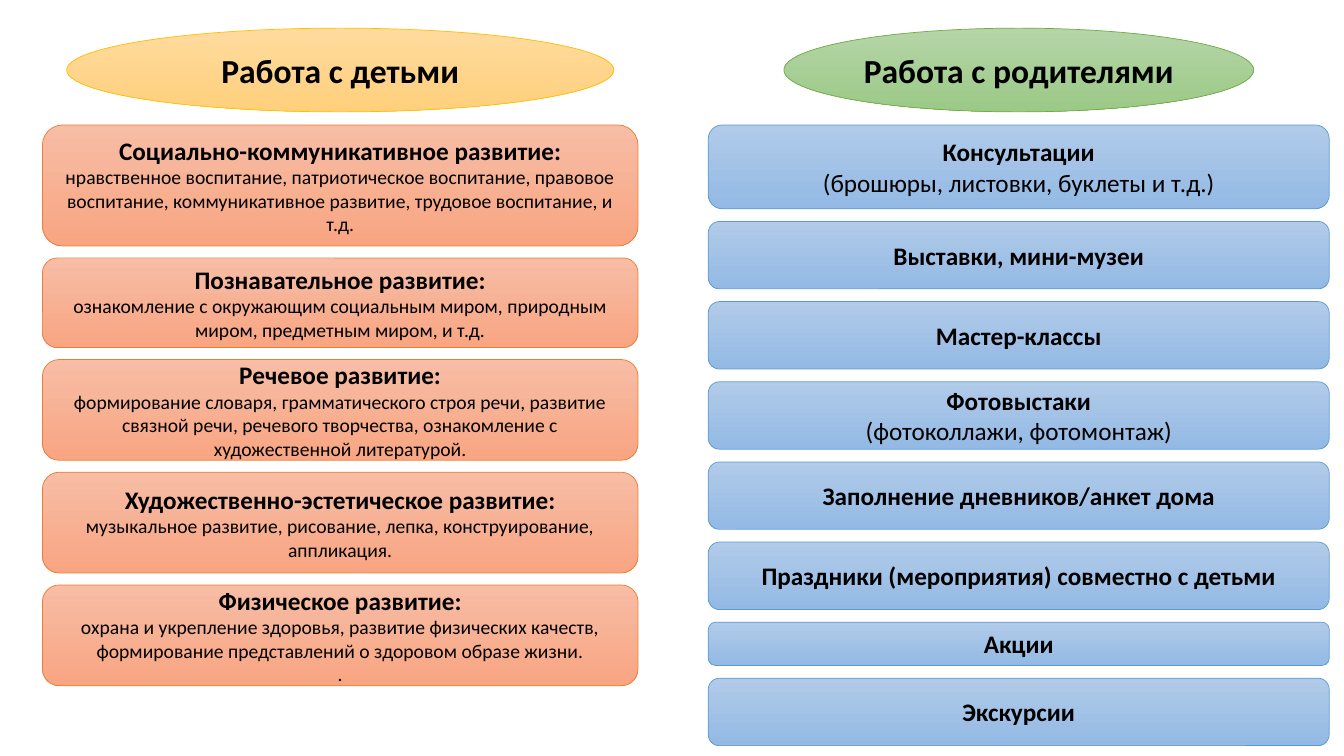
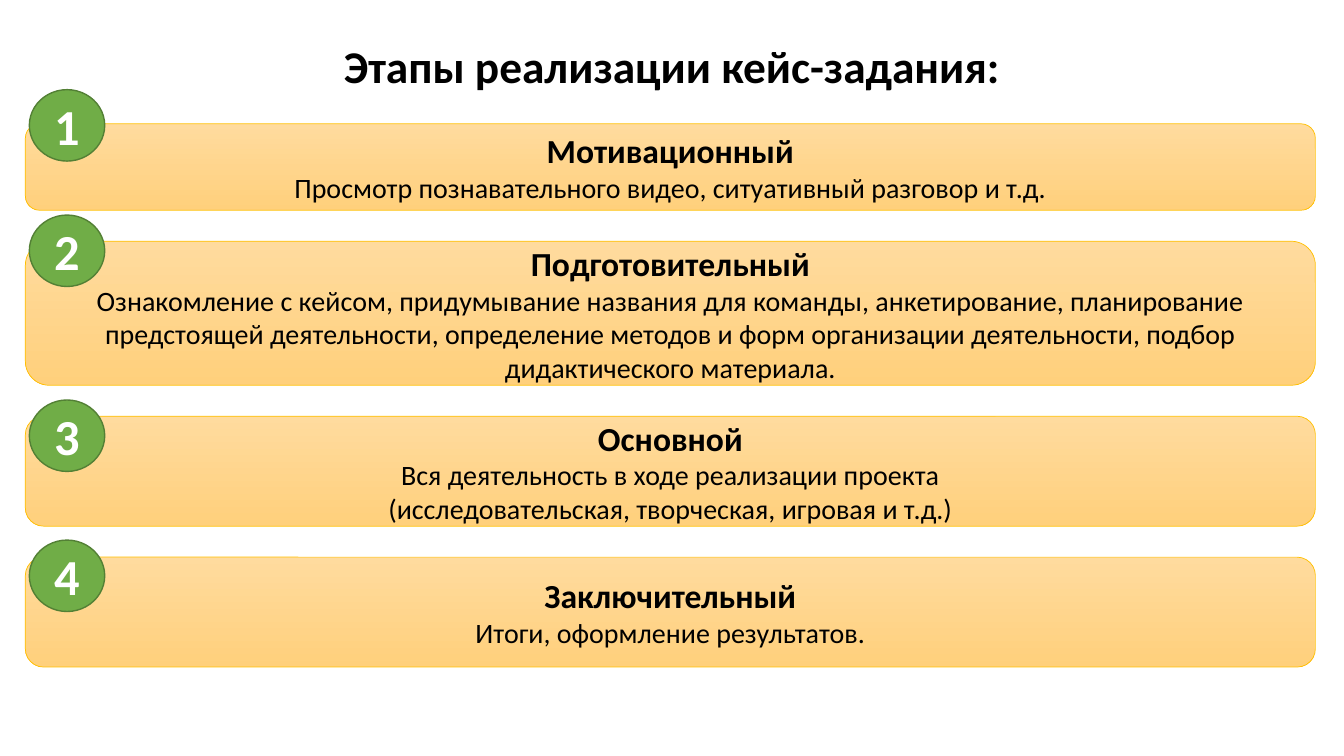
from pptx import Presentation
from pptx.dml.color import RGBColor
from pptx.enum.shapes import MSO_SHAPE as Shape
from pptx.enum.text import MSO_ANCHOR as Anchor, MSO_AUTO_SIZE as AutoSize, PP_ALIGN as Align
from pptx.util import Cm, Pt

FONT = "Calibri"
BLACK, WHITE = "000000", "FFFFFF"

# Each style: fill colours from top to bottom, line colour, line width in points
GOLD = (("FFDB9E", "FFD07C"), "FFC000", 0.5)
LIGHT_GREEN = (("B5D5A7", "9CC987"), "70AD47", 0.5)
ORANGE = (("F7BDA5", "F8A582"), "ED7D31", 0.5)
BLUE = (("B1CBE9", "93B9E4"), "5B9BD5", 0.5)
BADGE_GREEN = (("70AD47",), "538035", 1)

# Each card: height in cm, heading, detail lines
CHILDREN_CARDS = [
    (3.05, "Социально-коммуникативное развитие:",
     ["нравственное воспитание, патриотическое воспитание, правовое воспитание, "
      "коммуникативное развитие, трудовое воспитание, и т.д."]),
    (2.26, "Познавательное развитие:",
     ["ознакомление с окружающим социальным миром, природным миром, "
      "предметным миром, и т.д."]),
    (2.54, "Речевое развитие:",
     ["формирование словаря, грамматического строя речи, развитие связной речи, "
      "речевого творчества, ознакомление с художественной литературой."]),
    (2.54, "Художественно-эстетическое развитие:",
     ["музыкальное развитие, рисование, лепка, конструирование, аппликация."]),
    (2.54, "Физическое развитие:",
     ["охрана и укрепление здоровья, развитие физических качеств, "
      "формирование представлений о здоровом образе жизни.", "."]),
]
PARENT_CARDS = [
    (2.11, "Консультации", ["(брошюры, листовки, буклеты и т.д.)"]),
    (1.7, "Выставки, мини-музеи", []),
    (1.7, "Мастер-классы", []),
    (1.7, "Фотовыстаки", ["(фотоколлажи, фотомонтаж)"]),
    (1.7, "Заполнение дневников/анкет дома", []),
    (1.7, "Праздники (мероприятия) совместно с детьми", []),
    (1.09, "Акции", []),
    (1.7, "Экскурсии", []),
]
STAGE_CARDS = [
    (2.18, "Мотивационный",
     ["Просмотр познавательного видео, ситуативный разговор и т.д."]),
    (3.63, "Подготовительный",
     ["Ознакомление с кейсом, придумывание названия для команды, анкетирование, "
      "планирование предстоящей деятельности, определение методов и форм "
      "организации деятельности, подбор дидактического материала."]),
    (2.77, "Основной",
     ["Вся деятельность в ходе реализации проекта",
      "(исследовательская, творческая, игровая и т.д.)"]),
    (2.77, "Заключительный", ["Итоги, оформление результатов."]),
]
# How far each number badge rises above its card, in cm
BADGE_RISES = [0.86, 0.66, 0.41, 0.43]


def color(hex_value):
    return RGBColor.from_string(hex_value)


def write_lines(text_frame, lines, font_color=BLACK):
    """Write centred paragraphs; each line is (text, size, bold)."""
    text_frame.word_wrap = True
    text_frame.auto_size = AutoSize.NONE
    text_frame.vertical_anchor = Anchor.MIDDLE
    text_frame.text = "\n".join(text for text, _, _ in lines)
    for paragraph, (_, size, bold) in zip(text_frame.paragraphs, lines):
        paragraph.alignment = Align.CENTER
        font = paragraph.runs[0].font
        font.name, font.size, font.bold = FONT, Pt(size), bold
        font.color.rgb = color(font_color)


def add_panel(slide, kind, box, style, lines, font_color=BLACK):
    """Draw one filled shape with text; box is left, top, width, height in cm."""
    shape = slide.shapes.add_shape(kind, *(Cm(length) for length in box))
    shape.shadow.inherit = False
    fills, line_color, line_width = style
    if len(fills) == 1:
        shape.fill.solid()
        shape.fill.fore_color.rgb = color(fills[0])
    else:
        shape.fill.gradient()
        shape.fill.gradient_angle = 270
        for stop, fill in zip(shape.fill.gradient_stops, fills):
            stop.color.rgb = color(fill)
    shape.line.color.rgb = color(line_color)
    shape.line.width = Pt(line_width)
    write_lines(shape.text_frame, lines, font_color)


def add_card_stack(slide, left, top, width, gap, style, cards, sizes):
    """Stack cards downwards with equal gaps and return their tops."""
    heading_size, detail_size = sizes
    tops = []
    for height, heading, details in cards:
        lines = [(heading, heading_size, True)]
        lines += [(detail, detail_size, False) for detail in details]
        add_panel(slide, Shape.ROUNDED_RECTANGLE, (left, top, width, height), style, lines)
        tops.append(top)
        top += height + gap
    return tops


def add_column(slide, left, width, header, header_width, header_style,
               gap, style, cards, sizes):
    """Place an oval header centred over a stack of cards."""
    header_left = left + (width - header_width) / 2
    add_panel(slide, Shape.OVAL, (header_left, 0.71, header_width, 2.11),
              header_style, [(header, 24, True)])
    add_card_stack(slide, left, 3.15, width, gap, style, cards, sizes)


def build_work_slide(presentation):
    slide = presentation.slides.add_slide(presentation.slide_layouts[6])
    add_column(slide, 1.07, 15.01, "Работа с детьми", 13.79, GOLD,
               0.3, ORANGE, CHILDREN_CARDS, (18, 14))
    add_column(slide, 17.85, 15.65, "Работа с родителями", 11.84, LIGHT_GREEN,
               0.32, BLUE, PARENT_CARDS, (18, 18))


def build_stages_slide(presentation):
    slide = presentation.slides.add_slide(presentation.slide_layouts[5])

    # Title
    title = slide.shapes.title
    title.left, title.top, title.width, title.height = Cm(2.33), Cm(1.02), Cm(29.21), Cm(1.45)
    write_lines(title.text_frame, [("Этапы реализации кейс-задания:", 32.4, True)])
    title.text_frame.paragraphs[0].line_spacing = 0.9

    # Stage cards and their number badges
    left = 0.64
    tops = add_card_stack(slide, left, 3.12, 32.51, 0.78, GOLD, STAGE_CARDS, (24, 20))
    for number, (top, rise) in enumerate(zip(tops, BADGE_RISES), start=1):
        add_panel(slide, Shape.OVAL, (left + 0.1, top - rise, 1.9, 1.8),
                  BADGE_GREEN, [(str(number), 36, True)], WHITE)


def main():
    presentation = Presentation()
    presentation.slide_width, presentation.slide_height = Cm(33.87), Cm(19.05)
    build_work_slide(presentation)
    build_stages_slide(presentation)
    presentation.save("out.pptx")


if __name__ == "__main__":
    main()
